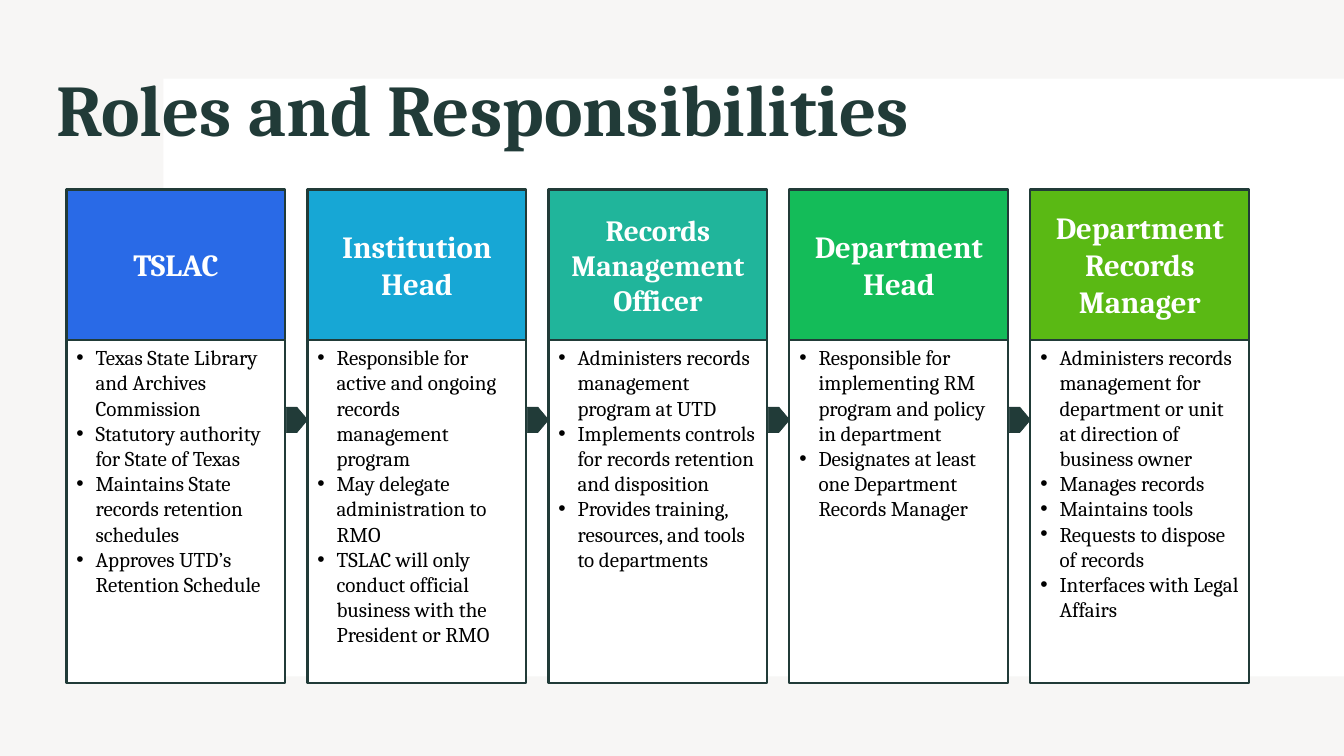
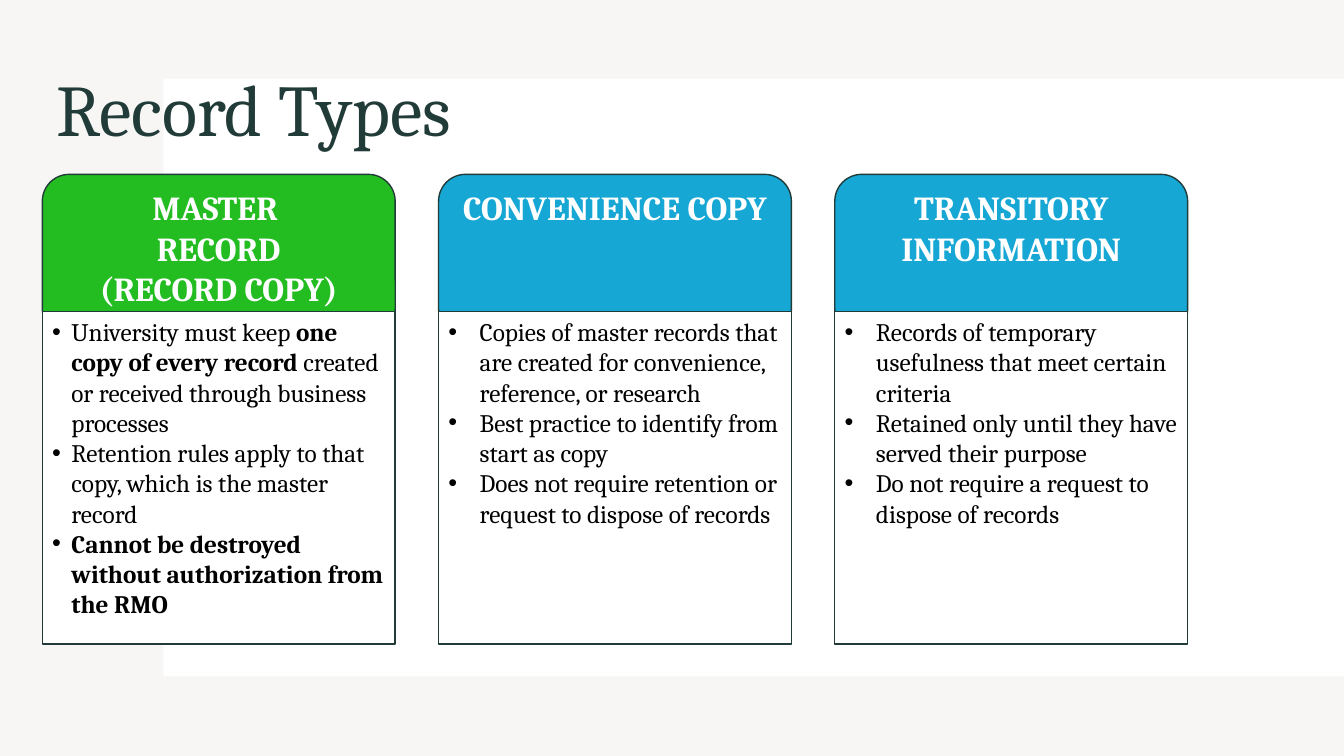
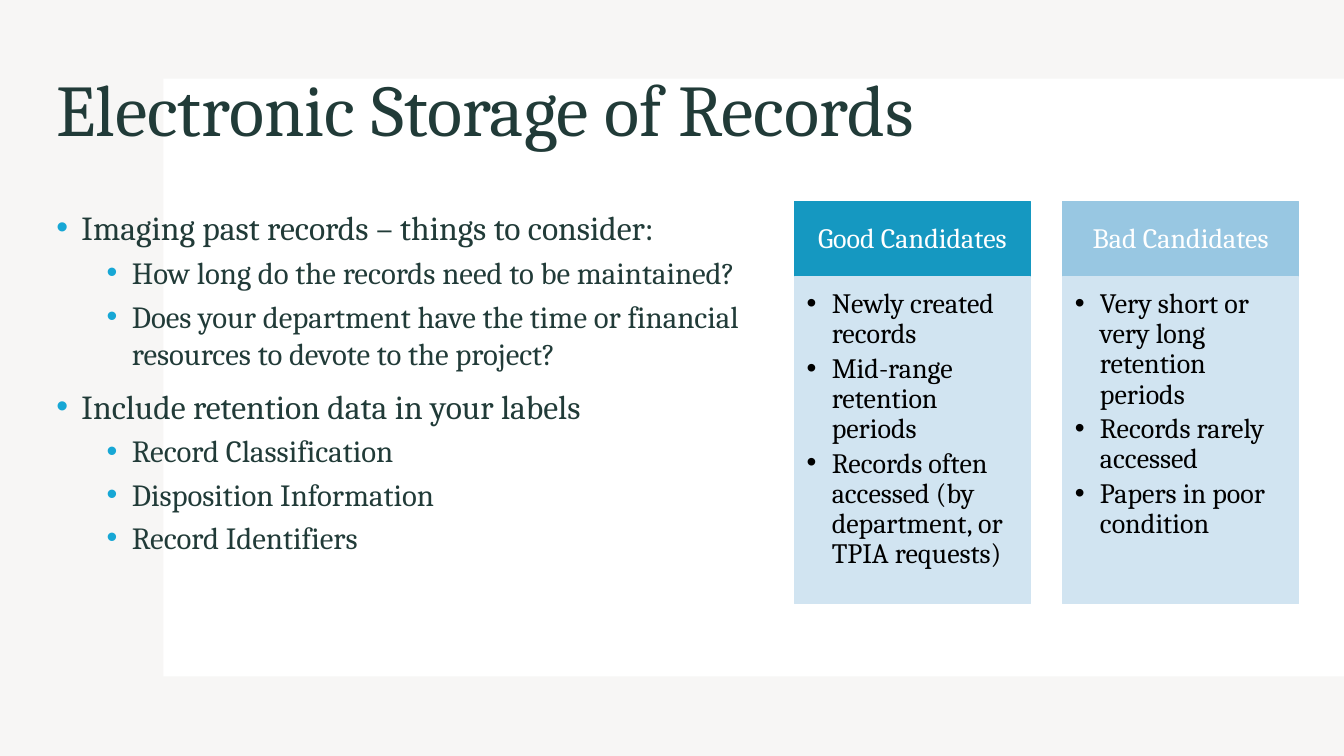
from lxml.etree import SubElement
from pptx import Presentation
from pptx.dml.color import RGBColor
from pptx.enum.shapes import MSO_SHAPE
from pptx.enum.text import MSO_ANCHOR, PP_ALIGN
from pptx.oxml.ns import qn
from pptx.util import Inches, Pt

DARK, WHITE, BLACK = "213B38", "FFFFFF", "000000"
BLUE, PAPER, PALE = "17A7D5", "F7F6F5", "D1E4F1"
FONT = "Cambria"
CENTER = {"alignment": PP_ALIGN.CENTER}
TIGHT = {"line_spacing": 0.9}
TOP = {"vertical_anchor": MSO_ANCHOR.TOP, "word_wrap": True}
MIDDLE = {"vertical_anchor": MSO_ANCHOR.MIDDLE, "word_wrap": True}


def box(slide, kind, place, fill=None, line=None, weight=1, frame=TOP):
    """Add a preset shape, or a text box if kind is None; return it."""
    place = [Inches(size) for size in place]
    if kind is None:
        shape = slide.shapes.add_textbox(*place)
    else:
        shape = slide.shapes.add_shape(kind, *place)
        shape.shadow.inherit = False
        shape.fill.solid()
        shape.fill.fore_color.rgb = RGBColor.from_string(fill)
        if line:
            shape.line.color.rgb = RGBColor.from_string(line)
            shape.line.width = Pt(weight)
        else:
            shape.line.fill.background()
    for name, value in frame.items():
        setattr(shape.text_frame, name, value)
    return shape


def write(shape, text, size, ink, bold=False, form=None, left=0, hang=0, dot=None):
    """Add one paragraph; parts between asterisks are bold, hang gives a bullet."""
    frame = shape.text_frame
    para = frame.add_paragraph() if frame.text else frame.paragraphs[0]
    for name, value in {"alignment": PP_ALIGN.LEFT, **(form or {})}.items():
        setattr(para, name, value)
    if hang:
        props = para._p.get_or_add_pPr()
        props.set("marL", str(Inches(left)))
        props.set("indent", str(-Inches(hang)))
        if dot:
            SubElement(SubElement(props, qn("a:buClr")), qn("a:srgbClr"), val=dot)
        SubElement(props, qn("a:buFont"), typeface="Arial")
        SubElement(props, qn("a:buChar"), char="•")
    for spot, part in enumerate(text.split("*")):
        if part:
            run = para.add_run()
            run.text = part
            style = {"name": FONT, "size": Pt(size), "bold": bold or spot % 2 == 1}
            for name, value in style.items():
                setattr(run.font, name, value)
            run.font.color.rgb = RGBColor.from_string(ink)


deck = Presentation()
deck.slide_width, deck.slide_height = Inches(13.33), Inches(7.5)

# Shared background, panel and title
slides = []
for title, bold in [
    ("Roles and Responsibilities", True),
    ("Record Types", False),
    ("Electronic Storage of Records", False),
]:
    slide = deck.slides.add_slide(deck.slide_layouts[6])
    slide.background.fill.solid()
    slide.background.fill.fore_color.rgb = RGBColor.from_string(PAPER)
    box(slide, MSO_SHAPE.RECTANGLE, (1.62, 0.78, 11.71, 5.93), WHITE)
    head = box(slide, None, (0.46, 0.4, 11.53, 1.45), frame=MIDDLE)
    write(head, title, 52, DARK, bold, TIGHT)
    slides.append(slide)
roles, types, storage = slides

# Roles: five columns joined by arrows
columns = [
    ("TSLAC", 22, "296AE7", [
        "Texas State Library and Archives Commission",
        "Statutory authority for State of Texas",
        "Maintains State records retention schedules",
        "Approves UTD’s Retention Schedule",
    ]),
    ("Institution Head", 22, BLUE, [
        "Responsible for active and ongoing records management program",
        "May delegate administration to RMO",
        "TSLAC will only conduct official business with the President or RMO",
    ]),
    ("Records Management Officer", 21, "20B59B", [
        "Administers records management program at UTD",
        "Implements controls for records retention and disposition",
        "Provides training, resources, and tools to departments",
    ]),
    ("Department Head", 22, "14BC59", [
        "Responsible for implementing RM program and policy in department",
        "Designates at least one Department Records Manager",
    ]),
    ("Department Records Manager", 22, "5AB914", [
        "Administers records management for department or unit "
        "at direction of business owner",
        "Manages records",
        "Maintains tools",
        "Requests to dispose of records",
        "Interfaces with Legal Affairs",
    ]),
]
for spot, (name, size, fill, duties) in enumerate(columns):
    x = 0.66 + spot * 2.39
    head = box(roles, MSO_SHAPE.RECTANGLE, (x, 1.88, 2.17, 1.49), fill, DARK, 1.5, MIDDLE)
    write(head, name, size, WHITE, True, CENTER)
    body = box(roles, MSO_SHAPE.RECTANGLE, (x, 3.37, 2.17, 3.41), WHITE, DARK, 1.5)
    for duty in duties:
        write(body, duty, 15, BLACK, left=0.19, hang=0.19)
    if spot < len(columns) - 1:
        box(roles, MSO_SHAPE.PENTAGON, (x + 2.18, 4.04, 0.21, 0.25), DARK, DARK, 0.5)

# Record types: three cards with rounded tops
cards = [
    (["MASTER ", "RECORD", "(RECORD COPY)"], "23BD22", 0.19, [
        "University must keep *one copy of every record *created "
        "or received through business processes",
        "Retention rules apply to that copy, which is the master record",
        "*Cannot be destroyed without authorization from the RMO*",
    ]),
    (["CONVENIENCE COPY"], BLUE, 0.31, [
        "Copies of master records that are created for convenience, "
        "reference, or research",
        "Best practice to identify from start as copy",
        "Does not require retention or request to dispose of records",
    ]),
    (["TRANSITORY INFORMATION"], BLUE, 0.31, [
        "Records of temporary usefulness that meet certain criteria",
        "Retained only until they have served their purpose",
        "Do not require a request to dispose of records",
    ]),
]
for spot, (lines, fill, hang, facts) in enumerate(cards):
    x = 0.42 + spot * 3.93
    head = box(types, MSO_SHAPE.ROUNDED_RECTANGLE, (x, 1.73, 3.5, 1.6), fill, DARK)
    for line in lines:
        write(head, line, 24, WHITE, True, CENTER)
    body = box(types, MSO_SHAPE.RECTANGLE, (x, 3.09, 3.5, 3.3), WHITE, DARK)
    for fact in facts:
        write(body, fact, 18, BLACK, left=hang, hang=hang)

# Electronic storage: outline on the left
outline = box(storage, None, (0.46, 2, 7.42, 4.6))
for topic, gap, points in [
    ("Imaging past records – things to consider:", 5, [
        "How long do the records need to be maintained?",
        "Does your department have the time or financial "
        "resources to devote to the project?",
    ]),
    ("Include retention data in your labels", 4.4, [
        "Record Classification",
        "Disposition Information",
        "Record Identifiers",
    ]),
]:
    write(outline, topic, 24, DARK, form={"space_before": Pt(10)},
          left=0.25, hang=0.25, dot=BLUE)
    for point in points:
        write(outline, point, 22, DARK, form={"space_before": Pt(gap)},
              left=0.75, hang=0.25, dot=BLUE)

# Electronic storage: two lists of candidates
inset = {"margin_left": Inches(0.12), "margin_top": Inches(0.12),
         "margin_right": Inches(0.16), "margin_bottom": Inches(0.17)}
for spot, (name, fill, kinds) in enumerate([
    ("Good Candidates", "1598C1", [
        "Newly created records",
        "Mid-range retention periods",
        "Records often accessed (by department, or TPIA requests)",
    ]),
    ("Bad Candidates", "98C7E2", [
        "Very short or very long retention periods",
        "Records rarely accessed",
        "Papers in poor condition",
    ]),
]):
    x = 7.88 + spot * 2.66
    head = box(storage, MSO_SHAPE.RECTANGLE, (x, 2, 2.34, 0.75), fill, fill, frame=MIDDLE)
    write(head, name, 20, WHITE, form={**CENTER, **TIGHT})
    body = box(storage, MSO_SHAPE.RECTANGLE, (x, 2.75, 2.34, 3.24), PALE, PALE,
               frame={**TOP, **inset})
    for kind in kinds:
        write(body, kind, 20, BLACK, form={**TIGHT, "space_after": Pt(3)},
              left=0.25, hang=0.25)

deck.save("out.pptx")
